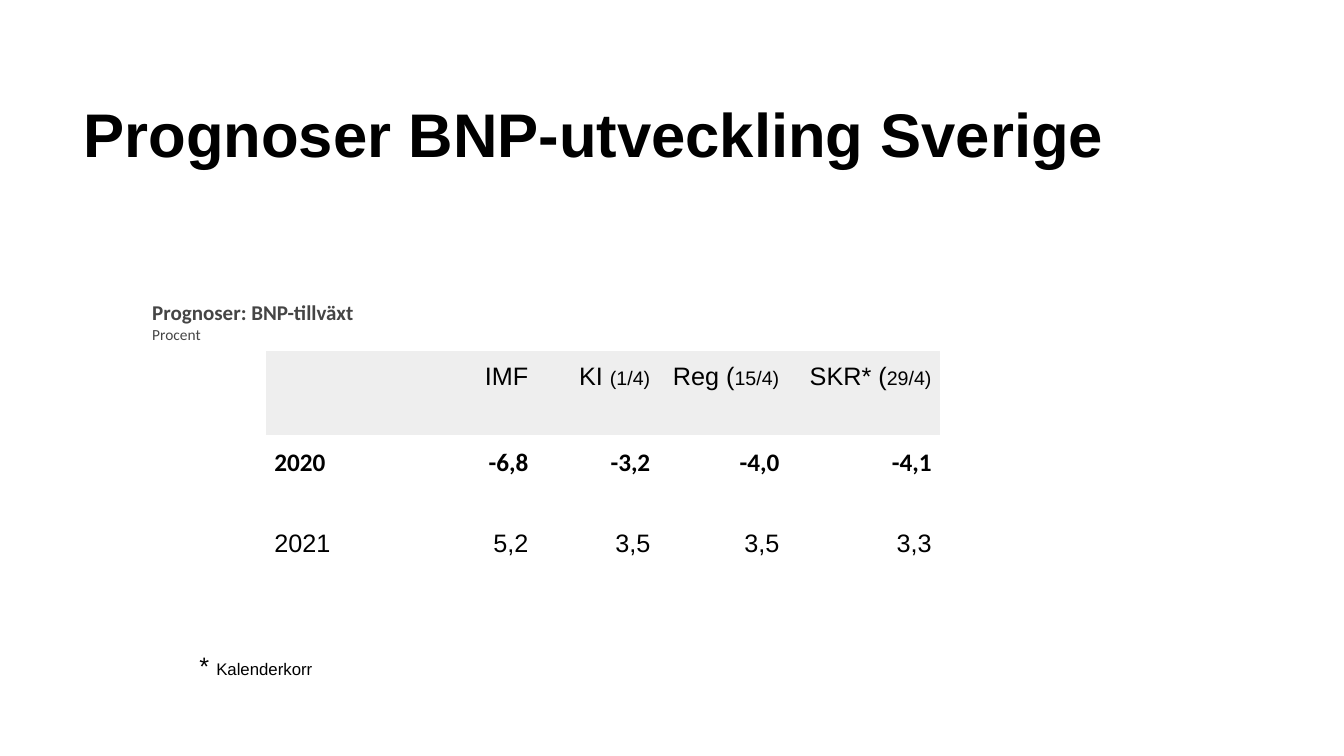
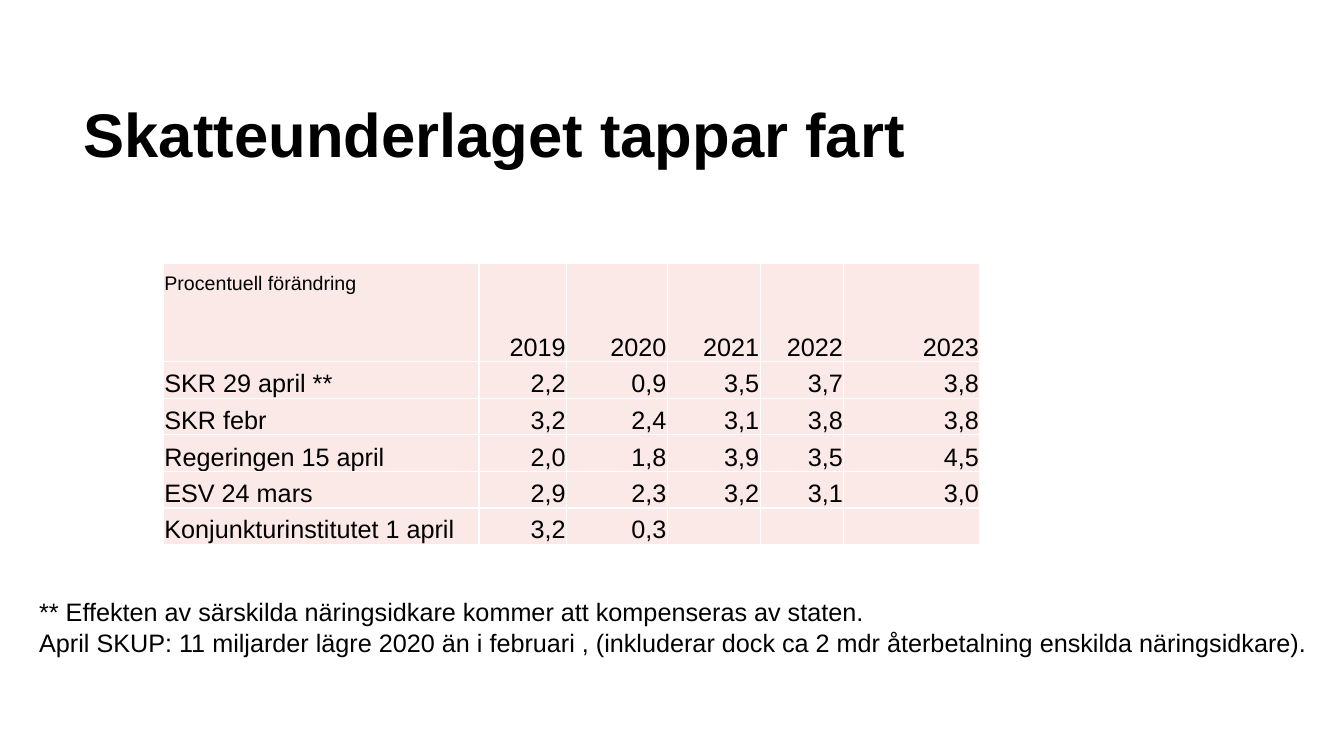
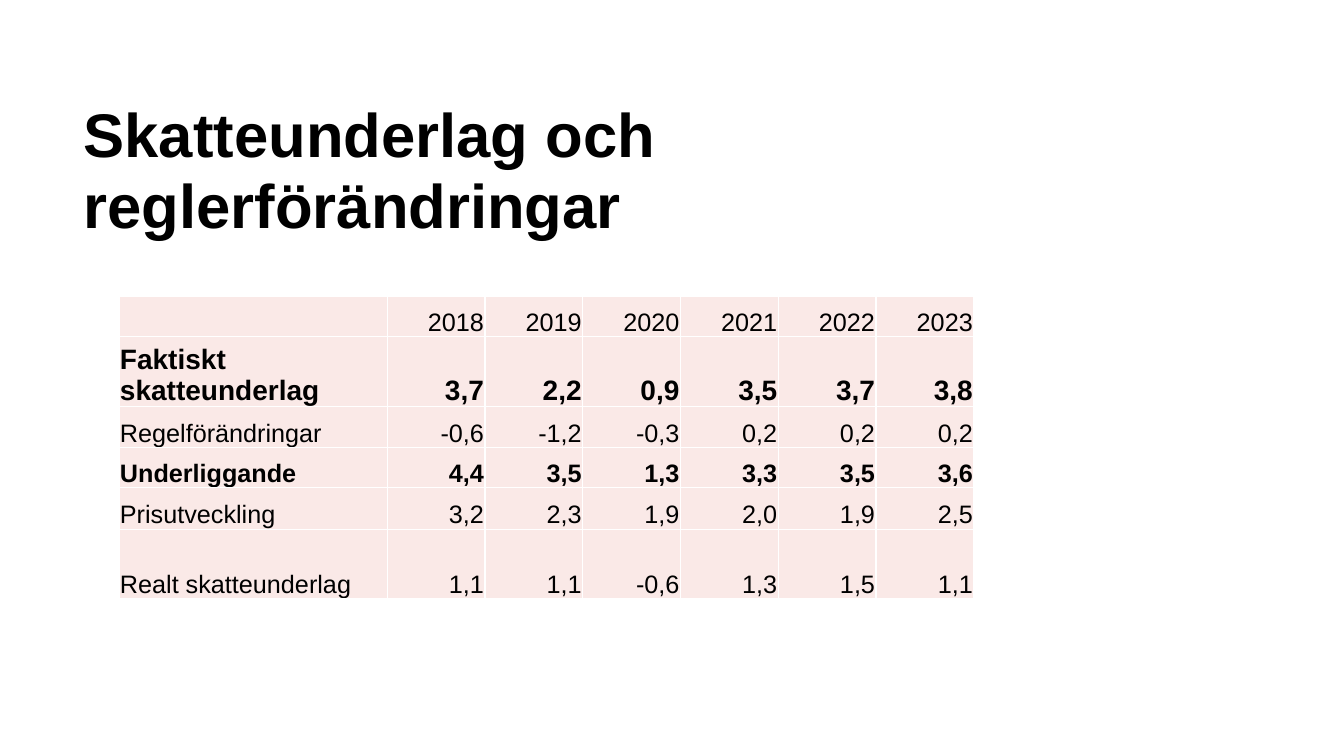
"""Build three slides with Swedish GDP and tax base forecasts."""
from dataclasses import dataclass

from lxml.etree import SubElement
from pptx import Presentation
from pptx.dml.color import RGBColor
from pptx.enum.text import MSO_ANCHOR, MSO_AUTO_SIZE, PP_ALIGN
from pptx.oxml.ns import qn
from pptx.util import Inches, Pt


@dataclass(frozen=True)
class Theme:
    text: RGBColor = RGBColor(0x00, 0x00, 0x00)
    muted: RGBColor = RGBColor(0x45, 0x45, 0x45)
    header: RGBColor = RGBColor(0xEE, 0xEE, 0xEE)
    blush: RGBColor = RGBColor(0xFA, 0xE9, 0xE7)
    grid: str = "FFFFFF"
    font: str = "Arial"
    accent_font: str = "Calibri"
    title: Pt = Pt(44)
    strong: Pt = Pt(20)
    body: Pt = Pt(18)
    heading: Pt = Pt(15)
    small: Pt = Pt(14)
    note: Pt = Pt(12)
    unit: Pt = Pt(11)


THEME = Theme()
PLAIN_TABLE = "{2D5ABB26-0587-4C30-8999-92F81FD0307C}"
BODY = {"name": THEME.font, "size": THEME.body, "bold": False, "color": THEME.text}
TITLE = {**BODY, "size": THEME.title, "bold": True}
SMALL = {"size": THEME.small}
HEADING = {"name": THEME.accent_font, "size": THEME.heading, "bold": True, "color": THEME.muted}
UNIT = {**HEADING, "size": THEME.unit, "bold": False}

OPEN_STYLE = {
    "anchor": MSO_ANCHOR.TOP,
    "margins": (0.08, 0.12, 0.08, 0.12),
    "header": THEME.header,
    "fill": None,
    "grid": False,
}
BLUSH_STYLE = {
    "anchor": MSO_ANCHOR.BOTTOM,
    "margins": (0.01, 0.01, 0.01, 0),
    "header": THEME.blush,
    "fill": THEME.blush,
    "grid": True,
}

SLIDES = [
    {
        "title": "Prognoser BNP-utveckling Sverige",
        "table": {
            "style": OPEN_STYLE,
            "at": (2.64, 3.48),
            "columns": [1.34, 1.34, 1.21, 1.28, 1.51],
            "heights": [0.84, 0.82, 0.82],
            "rows": [
                ["", "IMF", [("KI ", {}), ("(1/4)", SMALL)],
                 [("Reg (", {}), ("15/4)", SMALL)], [("SKR* (", {}), ("29/4)", SMALL)]],
                ["2020", "-6,8", "-3,2", "-4,0", "-4,1"],
                ["2021", "5,2", "3,5", "3,5", "3,3"],
            ],
            "row_formats": {1: {"name": THEME.accent_font, "bold": True}},
        },
        "notes": [
            {"at": (1.51, 2.9, 11.82, 0.58),
             "frame": {"word_wrap": True, "vertical_anchor": MSO_ANCHOR.MIDDLE,
                       "margin_left": 0, "margin_right": 0,
                       "margin_top": Inches(0.07), "margin_bottom": Inches(0.07)},
             "lines": [[("Prognoser: BNP-tillväxt", HEADING)], [("Procent", UNIT)]]},
            {"at": (1.88, 6.4, 1.33, 0.4),
             "frame": {"word_wrap": False},
             "lines": [[("* ", {}), ("Kalenderkorr", {"size": THEME.note})]]},
        ],
    },
    {
        "title": "Skatteunderlaget tappar fart",
        "table": {
            "style": BLUSH_STYLE,
            "at": (1.62, 2.61),
            "columns": [3.13, 0.87, 1, 0.92, 0.83, 1.35],
            "heights": [0.98, 0.36, 0.36, 0.37, 0.36, 0.36],
            "rows": [
                [[("Procentuell förändring", SMALL)], "2019", "2020", "2021", "2022", "2023"],
                ["SKR 29 april **", "2,2", "0,9", "3,5", "3,7", "3,8"],
                ["SKR febr", "3,2", "2,4", "3,1", "3,8", "3,8"],
                ["Regeringen 15 april", "2,0", "1,8", "3,9", "3,5", "4,5"],
                ["ESV 24 mars", "2,9", "2,3", "3,2", "3,1", "3,0"],
                ["Konjunkturinstitutet 1 april", "3,2", "0,3", "", "", ""],
            ],
            "corner": {"vertical_anchor": MSO_ANCHOR.TOP, "margin_top": Inches(0.1)},
        },
        "notes": [
            {"at": (0.29, 5.87, 12.96, 0.71),
             "frame": {"word_wrap": False},
             "lines": [
                 "** Effekten av särskilda näringsidkare kommer att kompenseras av staten.",
                 "April SKUP: 11 miljarder lägre 2020 än i februari , (inkluderar dock "
                 "ca 2 mdr återbetalning enskilda näringsidkare).",
             ]},
        ],
    },
    {
        "title": "Skatteunderlag och reglerförändringar",
        "table": {
            "style": BLUSH_STYLE,
            "at": (1.18, 2.94),
            "columns": [2.66] + [0.97] * 6,
            "heights": [0.4, 0.69, 0.41, 0.4, 0.41, 0.69],
            "rows": [
                ["", "2018", "2019", "2020", "2021", "2022", "2023"],
                ["Faktiskt skatteunderlag", "3,7", "2,2", "0,9", "3,5", "3,7", "3,8"],
                ["Regelförändringar", "-0,6", "-1,2", "-0,3", "0,2", "0,2", "0,2"],
                ["Underliggande", "4,4", "3,5", "1,3", "3,3", "3,5", "3,6"],
                ["Prisutveckling", "3,2", "2,3", "1,9", "2,0", "1,9", "2,5"],
                ["Realt skatteunderlag", "1,1", "1,1", "-0,6", "1,3", "1,5", "1,1"],
            ],
            "row_formats": {1: {"size": THEME.strong, "bold": True}, 3: {"bold": True}},
        },
        "notes": [],
    },
]


def apply(target, values):
    for attribute, value in values.items():
        setattr(target, attribute, value)


def write(paragraph, content, base=BODY):
    runs = [(content, {})] if isinstance(content, str) else content
    for text, changes in runs:
        if text:
            run = paragraph.add_run()
            run.text = text
            look = {**base, **changes}
            run.font.color.rgb = look.pop("color")
            apply(run.font, look)


def add_title(slide, text):
    title = slide.shapes.title
    apply(title, {"left": Inches(0.73), "top": Inches(0.96),
                  "width": Inches(10.51), "height": Inches(1.35)})
    apply(title.text_frame, {"word_wrap": True, "auto_size": MSO_AUTO_SIZE.NONE,
                             "vertical_anchor": MSO_ANCHOR.TOP})
    paragraph = title.text_frame.paragraphs[0]
    apply(paragraph, {"alignment": PP_ALIGN.LEFT, "line_spacing": 0.95})
    write(paragraph, text, TITLE)


def draw_grid(frame):
    for properties in frame.element.iter(qn("a:tcPr")):
        for place, side in enumerate(("lnL", "lnR", "lnT", "lnB")):
            line = SubElement(properties, qn(f"a:{side}"), w=str(Pt(1)))
            SubElement(SubElement(line, qn("a:solidFill")), qn("a:srgbClr"), val=THEME.grid)
            properties.insert(place, line)


def add_forecast(slide, forecast):
    style, columns, heights = (forecast[key] for key in ("style", "columns", "heights"))
    left, top = forecast["at"]
    frame = slide.shapes.add_table(
        len(heights), len(columns), Inches(left), Inches(top),
        Inches(sum(columns)), Inches(sum(heights)))
    for style_id in frame.element.iter(qn("a:tableStyleId")):
        style_id.text = PLAIN_TABLE
    table = frame.table
    apply(table, {"first_row": False, "horz_banding": False})
    for column, width in zip(table.columns, columns):
        column.width = Inches(width)
    sides = ("margin_left", "margin_top", "margin_right", "margin_bottom")
    cell_format = {side: Inches(size) for side, size in zip(sides, style["margins"])}
    cell_format["vertical_anchor"] = style["anchor"]
    for row_index, (row, height) in enumerate(zip(forecast["rows"], heights)):
        table.rows[row_index].height = Inches(height)
        base = {**BODY, **forecast.get("row_formats", {}).get(row_index, {})}
        fill = style["fill"] if row_index else style["header"]
        for column_index, content in enumerate(row):
            cell = table.cell(row_index, column_index)
            apply(cell, cell_format)
            if fill is None:
                cell.fill.background()
            else:
                cell.fill.solid()
                cell.fill.fore_color.rgb = fill
            paragraph = cell.text_frame.paragraphs[0]
            paragraph.alignment = PP_ALIGN.RIGHT if column_index else PP_ALIGN.LEFT
            write(paragraph, content, base)
    apply(table.cell(0, 0), forecast.get("corner", {}))
    if style["grid"]:
        draw_grid(frame)


def add_note(slide, note):
    text_frame = slide.shapes.add_textbox(*map(Inches, note["at"])).text_frame
    apply(text_frame, {"auto_size": MSO_AUTO_SIZE.SHAPE_TO_FIT_TEXT, **note["frame"]})
    for index, line in enumerate(note["lines"]):
        write(text_frame.add_paragraph() if index else text_frame.paragraphs[0], line)


def main():
    deck = Presentation()
    apply(deck, {"slide_width": Inches(13.33), "slide_height": Inches(7.5)})
    title_only = deck.slide_layouts.get_by_name("Title Only")
    for content in SLIDES:
        slide = deck.slides.add_slide(title_only)
        add_title(slide, content["title"])
        add_forecast(slide, content["table"])
        for note in content["notes"]:
            add_note(slide, note)
    deck.save("out.pptx")


if __name__ == "__main__":
    main()
